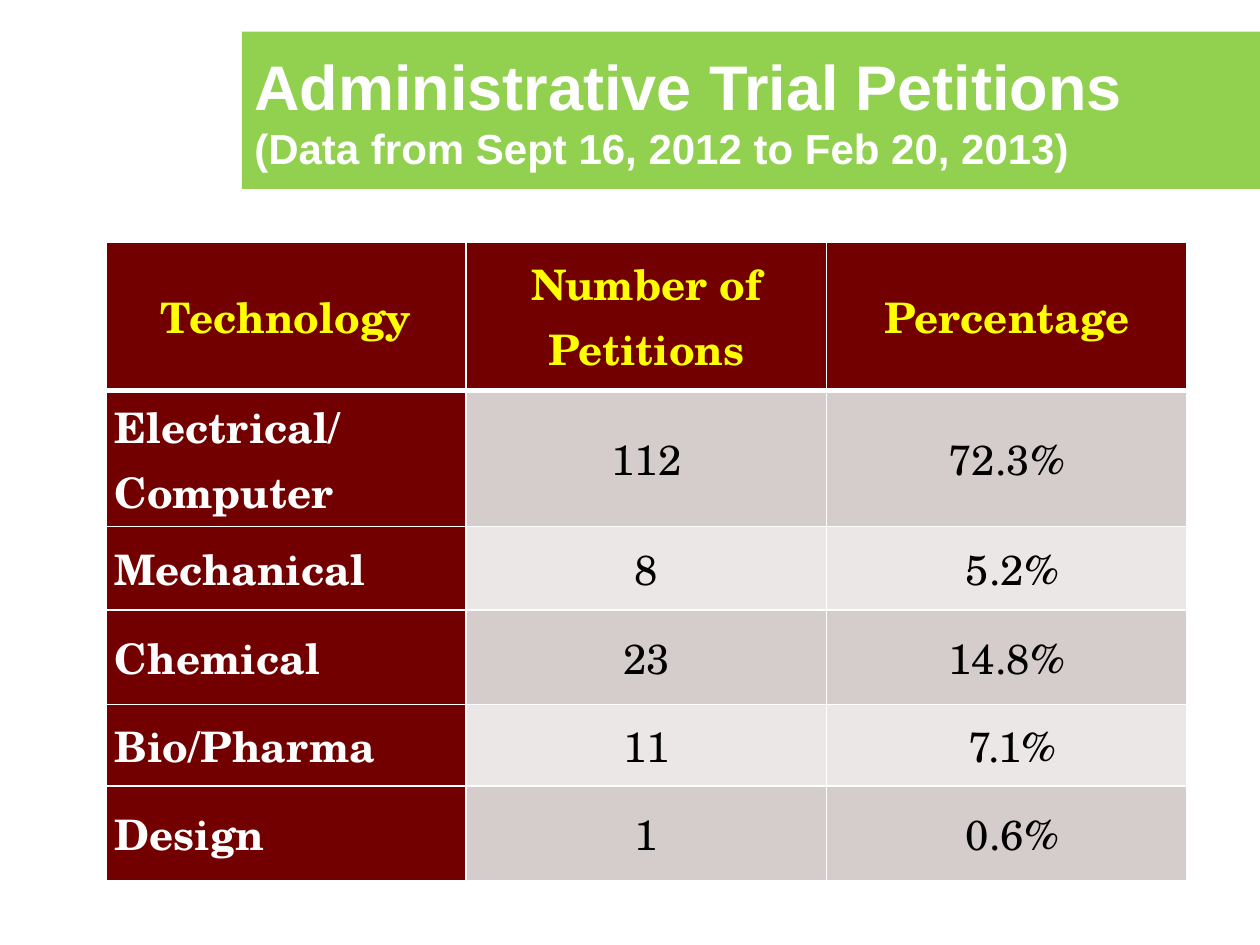
from pptx import Presentation
from pptx.dml.color import RGBColor
from pptx.enum.shapes import MSO_SHAPE
from pptx.enum.text import MSO_ANCHOR, PP_ALIGN
from pptx.oxml import parse_xml
from pptx.oxml.ns import nsdecls
from pptx.util import Inches, Pt

RECTANGLE = MSO_SHAPE.RECTANGLE
MIDDLE = MSO_ANCHOR.MIDDLE
LEFT, CENTER = PP_ALIGN.LEFT, PP_ALIGN.CENTER

COLORS = {
    "banner": "92D050",
    "maroon": "730000",
    "dark_band": "D5CCCC",
    "light_band": "EBE7E7",
    "yellow": "FFFF00",
    "white": "FFFFFF",
    "black": "000000",
}

HEADINGS = ["Technology", "Number of Petitions", "Percentage"]
PETITIONS = [
    ("Electrical/\nComputer", "112", "72.3%"),
    ("Mechanical", "8", "5.2%"),
    ("Chemical", "23", "14.8%"),
    ("Bio/Pharma", "11", "7.1%"),
    ("Design", "1", "0.6%"),
]
ROW_HEIGHTS = [1.18, 1.08, 0.66, 0.75, 0.65, 0.75]
COLUMN_WIDTH = 2.86
CELL_MARGIN = 0.07
SINGLE_DIGIT_INDENT = 0.09


class SlideBuilder:
    title_font = "Arial"
    table_font = "TeX Gyre Schola"
    table_size = 24

    def __init__(self, slide):
        self.slide = slide

    def style_font(self, font, name, size, color, bold):
        font.name = name
        font.size = Pt(size)
        font.bold = bold
        font.color.rgb = RGBColor.from_string(COLORS[color])

    def banner(self, left, top, width, height, title, subtitle):
        shape = self.slide.shapes.add_shape(
            RECTANGLE, Inches(left), Inches(top), Inches(width), Inches(height)
        )
        shape.shadow.inherit = False
        shape.fill.solid()
        shape.fill.fore_color.rgb = RGBColor.from_string(COLORS["banner"])
        shape.line.fill.background()
        shape.text_frame.word_wrap = True
        shape.text_frame.vertical_anchor = MIDDLE
        paragraph = shape.text_frame.paragraphs[0]
        paragraph.alignment = LEFT
        self.style_font(paragraph.font, self.title_font, 36, "white", True)
        paragraph.add_run().text = title
        paragraph.add_line_break()
        subtitle_run = paragraph.add_run()
        subtitle_run.text = subtitle
        subtitle_run.font.size = Pt(24)

    def borders(self, cell, bottom_width):
        properties = cell._tc.get_or_add_tcPr()
        widths = {"lnL": 1, "lnR": 1, "lnT": 1, "lnB": bottom_width}
        for position, (tag, width) in enumerate(widths.items()):
            line = parse_xml(
                f'<a:{tag} {nsdecls("a")} w="{Pt(width)}"><a:solidFill>'
                f'<a:srgbClr val="{COLORS["white"]}"/></a:solidFill></a:{tag}>'
            )
            properties.insert(position, line)

    def cell(self, cell, text, fill, color, bold, alignment, indent=0, bottom_width=1):
        cell.fill.solid()
        cell.fill.fore_color.rgb = RGBColor.from_string(COLORS[fill])
        cell.vertical_anchor = MIDDLE
        cell.margin_left = Inches(CELL_MARGIN + indent)
        cell.margin_right = Inches(CELL_MARGIN)
        cell.margin_top = cell.margin_bottom = 0
        cell.text_frame.text = text
        for paragraph in cell.text_frame.paragraphs:
            paragraph.alignment = alignment
            self.style_font(paragraph.font, self.table_font, self.table_size, color, bold)
        self.borders(cell, bottom_width)

    def table(self, left, top, headings, records):
        table = self.slide.shapes.add_table(
            len(records) + 1, len(headings), Inches(left), Inches(top),
            Inches(COLUMN_WIDTH * len(headings)), Inches(sum(ROW_HEIGHTS)),
        ).table
        for column in table.columns:
            column.width = Inches(COLUMN_WIDTH)
        for row, height in zip(table.rows, ROW_HEIGHTS):
            row.height = Inches(height)
        for column, heading in enumerate(headings):
            self.cell(table.cell(0, column), heading, "maroon", "yellow", True,
                      CENTER, bottom_width=3)
        for row, (technology, count, percentage) in enumerate(records, start=1):
            band = "dark_band" if row % 2 else "light_band"
            indent = SINGLE_DIGIT_INDENT if len(percentage) == 4 else 0
            self.cell(table.cell(row, 0), technology, "maroon", "white", True, LEFT)
            self.cell(table.cell(row, 1), count, band, "black", False, CENTER)
            self.cell(table.cell(row, 2), percentage, band, "black", False, CENTER, indent)


def main():
    presentation = Presentation()
    presentation.slide_width = Inches(10)
    presentation.slide_height = Inches(7.5)
    builder = SlideBuilder(presentation.slides.add_slide(presentation.slide_layouts[6]))
    builder.banner(1.92, 0.25, 8.08, 1.25, "Administrative Trial Petitions",
                   "(Data from Sept 16, 2012 to Feb 20, 2013)")
    builder.table(0.84, 1.92, HEADINGS, PETITIONS)
    presentation.save("out.pptx")


if __name__ == "__main__":
    main()
